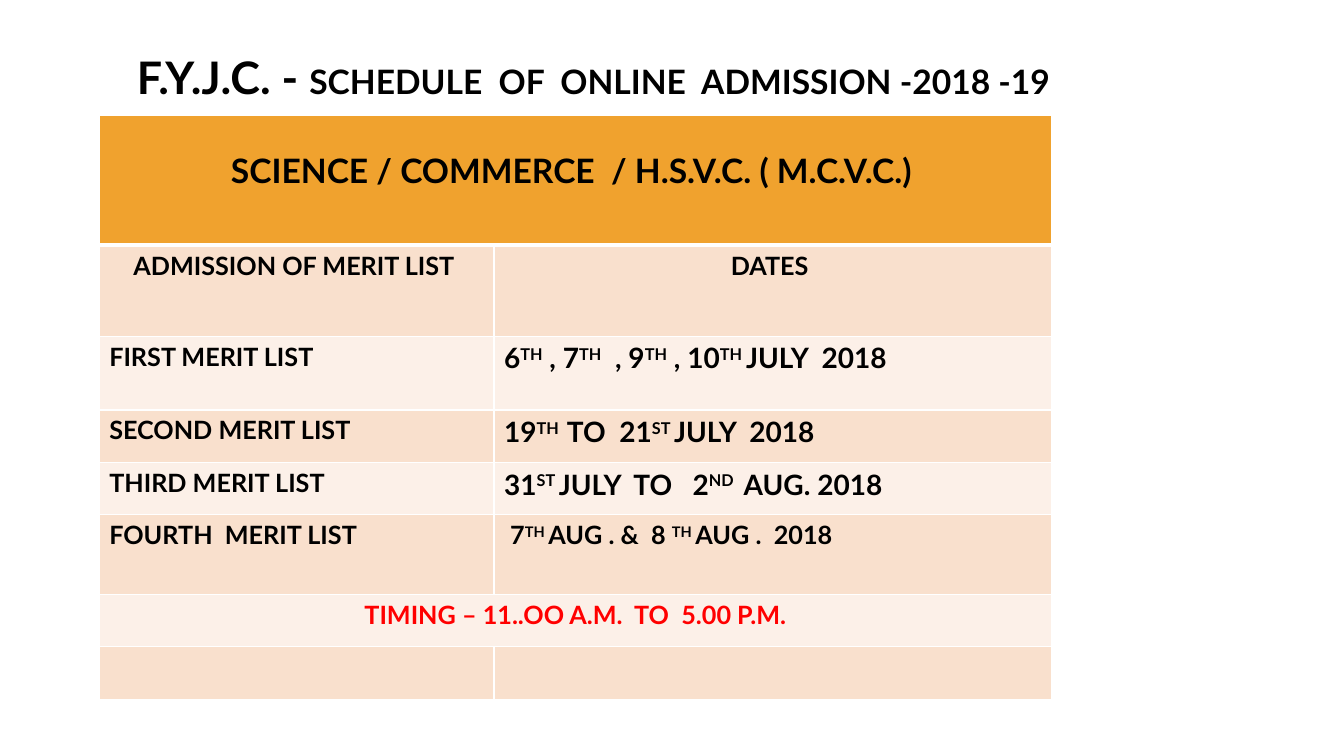
from dataclasses import dataclass

from lxml.etree import SubElement
from pptx import Presentation
from pptx.dml.color import RGBColor
from pptx.enum.text import PP_ALIGN
from pptx.oxml.ns import qn
from pptx.util import Cm, Pt


@dataclass(frozen=True)
class Theme:
    font: str = "Lato"
    text: str = "000000"
    alert: str = "FF0000"
    border: str = "FFFFFF"
    header: str = "F0A22E"
    bands: tuple = ("F9E0CD", "FCF0E8")
    title_size: int = 32
    heading_size: int = 24
    date_size: int = 20
    body_size: int = 18


class SlideBuilder:
    def __init__(self, slide, theme):
        self.slide = slide
        self.theme = theme

    def style(self, font, size, color=None):
        font.name = self.theme.font
        font.size = Pt(size)
        font.bold = True
        font.color.rgb = RGBColor.from_string(color or self.theme.text)

    def title(self, parts, left, top, width, height):
        """Write one line whose (text, size) parts differ in size."""
        frame = self.slide.shapes.add_textbox(left, top, width, height).text_frame
        frame.word_wrap = True
        for text, size in parts:
            run = frame.paragraphs[0].add_run()
            run.text = text
            self.style(run.font, size)

    def table(self, left, top, column_widths, row_heights):
        table = self.slide.shapes.add_table(
            len(row_heights), len(column_widths), left, top,
            sum(column_widths), sum(row_heights)).table
        for column, width in zip(table.columns, column_widths):
            column.width = width
        for row, height in zip(table.rows, row_heights):
            row.height = height
        return table

    def cell(self, cell, fill, bottom=1):
        properties = cell._tc.get_or_add_tcPr()
        for side, points in (("L", 1), ("R", 1), ("T", 1), ("B", bottom)):
            line = SubElement(properties, qn(f"a:ln{side}"), w=str(Pt(points)))
            solid = SubElement(line, qn("a:solidFill"))
            SubElement(solid, qn("a:srgbClr"), val=self.theme.border)
        cell.fill.solid()
        cell.fill.fore_color.rgb = RGBColor.from_string(fill)

    def cell_text(self, cell, text, size, align=PP_ALIGN.LEFT, color=None):
        """Write text in which every second part between bars is superscript."""
        paragraph = cell.text_frame.paragraphs[0]
        paragraph.alignment = align
        self.style(paragraph.font, size, color)
        for index, part in enumerate(text.split("|")):
            run = paragraph.add_run()
            run.text = part
            if index % 2:
                run._r.get_or_add_rPr().set("baseline", "30000")


def main():
    theme = Theme()
    presentation = Presentation()
    presentation.slide_width, presentation.slide_height = Cm(33.87), Cm(19.05)
    slide = presentation.slides.add_slide(presentation.slide_layouts[6])
    builder = SlideBuilder(slide, theme)

    builder.title(
        [("F.Y.J.C. - ", theme.title_size),
         ("SCHEDULE  OF  ONLINE  ADMISSION -2018 -19", theme.heading_size)],
        Cm(3.2), Cm(1.14), Cm(27.6), Cm(7.09))

    row_heights = [Cm(h) for h in (3.27, 2.29, 1.86, 1.32, 1.32, 2.01, 1.32, 1.32)]
    schedule = builder.table(Cm(2.5), Cm(2.91), [Cm(9.95), Cm(14.05)], row_heights)
    for index in range(len(row_heights)):
        for column in range(2):
            cell = schedule.cell(index, column)
            if index == 0:
                builder.cell(cell, theme.header, bottom=3)
            else:
                builder.cell(cell, theme.bands[(index - 1) % 2])

    streams, timing = schedule.cell(0, 0), schedule.cell(6, 0)
    streams.merge(schedule.cell(0, 1))
    timing.merge(schedule.cell(6, 1))
    streams.margin_top = Cm(0.89)
    builder.cell_text(streams, "SCIENCE / COMMERCE  / H.S.V.C. ( M.C.V.C.) ",
                      theme.heading_size, PP_ALIGN.CENTER)
    builder.cell_text(timing, "TIMING – 11..OO A.M.  TO  5.00 P.M.",
                      theme.body_size, PP_ALIGN.CENTER, theme.alert)
    for column, heading in enumerate(("ADMISSION OF MERIT LIST ", "DATES ")):
        builder.cell_text(schedule.cell(1, column), heading,
                          theme.body_size, PP_ALIGN.CENTER)

    merit_lists = [
        ("FIRST MERIT LIST", "6|TH| , 7|TH|  , 9|TH| , 10|TH |JULY  2018", theme.date_size),
        ("SECOND MERIT LIST", "19|TH  |TO  21|ST |JULY  2018", theme.date_size),
        ("THIRD MERIT LIST", "31|ST |JULY  TO   2|ND | AUG. 2018", theme.date_size),
        ("FOURTH  MERIT LIST", " 7|TH |AUG . &  8 |TH |AUG .  2018", theme.body_size),
    ]
    for index, (name, dates, date_size) in enumerate(merit_lists, start=2):
        builder.cell_text(schedule.cell(index, 0), name, theme.body_size)
        builder.cell_text(schedule.cell(index, 1), dates, date_size)

    presentation.save("out.pptx")


if __name__ == "__main__":
    main()
